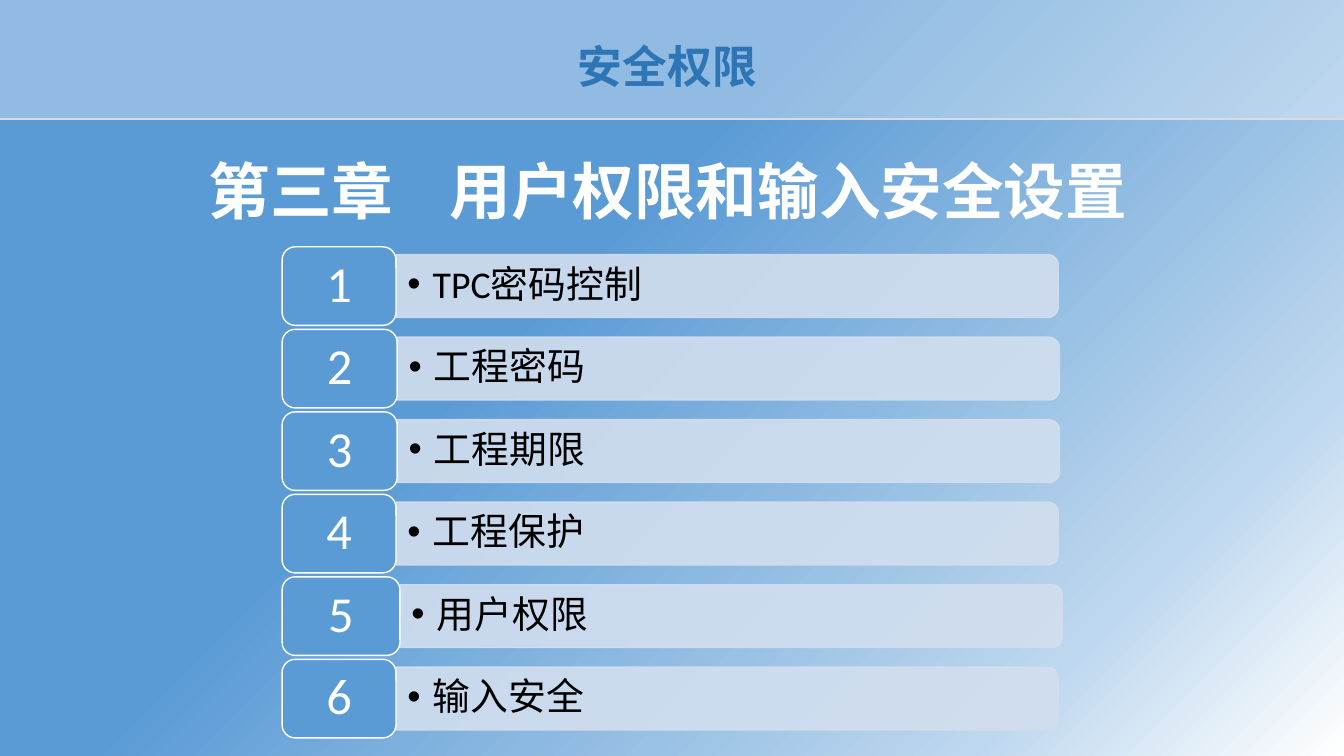
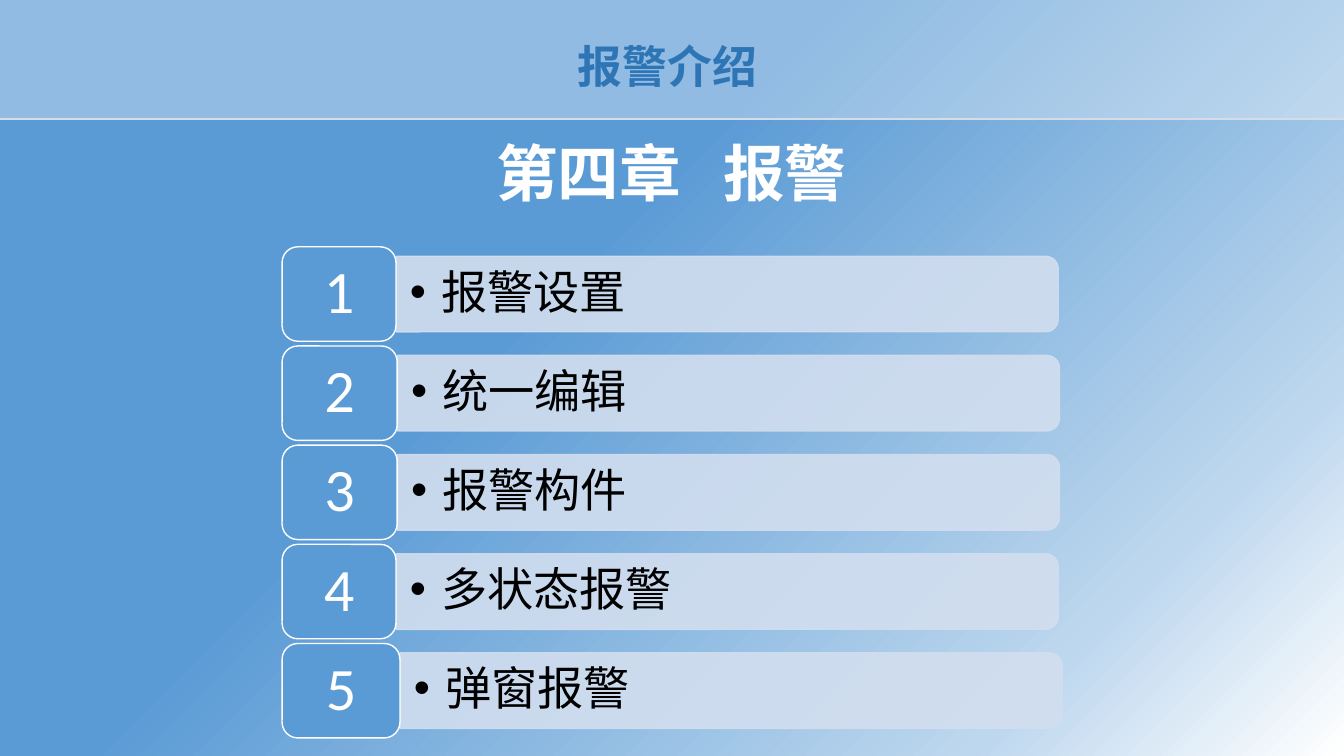
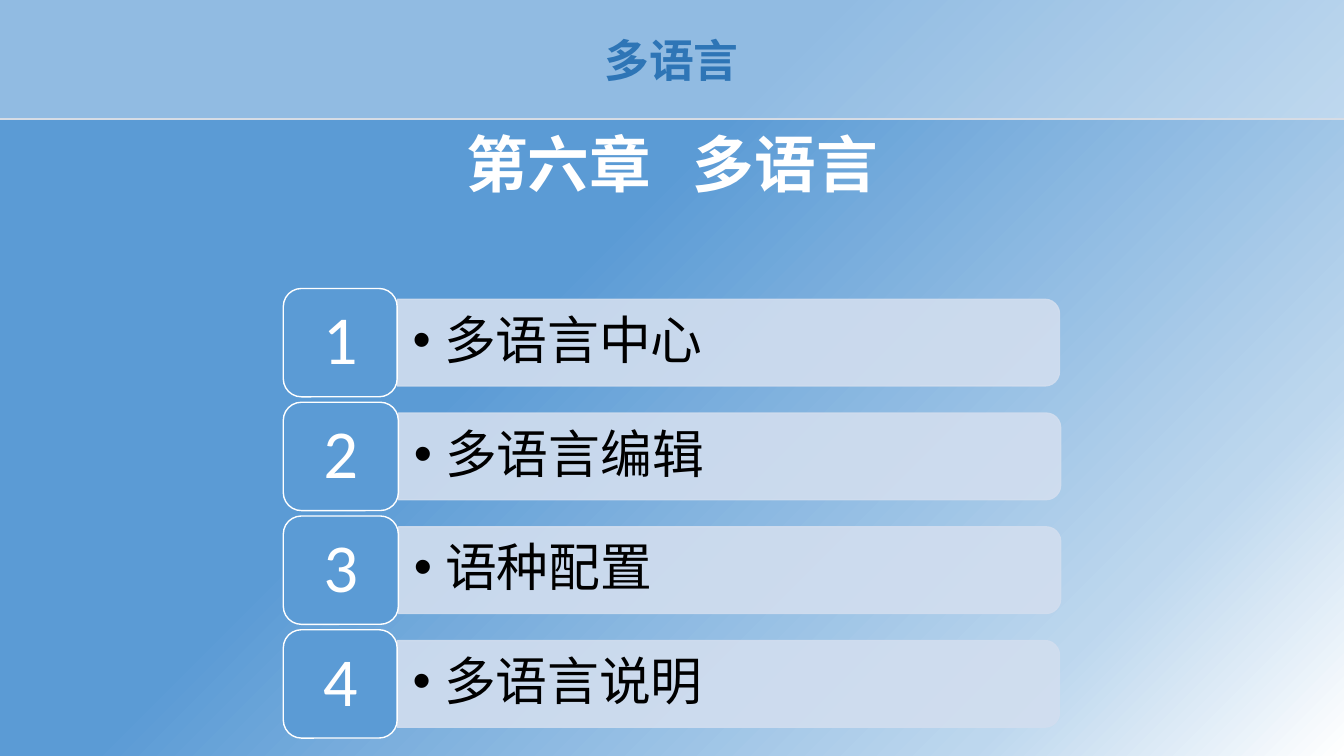
"""Build three chapter opening slides, each with a numbered list of topics."""
from dataclasses import dataclass

from pptx import Presentation
from pptx import util as u
from pptx.dml.color import RGBColor
from pptx.enum import shapes, text
from pptx.oxml import ns, parse_xml


@dataclass(frozen=True)
class Theme:
    white: str = "FFFFFF"
    black: str = "000000"
    blue: str = "5B9BD5"
    dark_blue: str = "2E75B6"
    bar: str = "D2DEEF"
    band_line: str = "D6DCE5"
    gradient: tuple[tuple[int, str], ...] = ((0, "FFFFFF"), (18, "BDD7EE"), (60, "5B9BD5"))
    title_font: str = "Noto Sans CJK SC"
    list_font: str = "Calibri"
    header_size: int = 32
    chapter_size: int = 44


@dataclass(frozen=True)
class Box:
    left: float
    top: float
    width: float
    height: float


@dataclass(frozen=True)
class Run:
    words: str
    size: float
    color: str
    font: str
    bold: bool = False


@dataclass(frozen=True)
class Chapter:
    header: str
    header_box: Box
    number: str
    name: str
    gap_size: int
    title_box: Box
    topics: tuple[str, ...]
    list_left: float
    list_top: float
    tile_height: float
    number_size: int
    topic_size: int
    indent: float


THEME = Theme()
TILE_WIDTHS = (2.87, 2.9, 2.9, 2.87, 2.97, 2.87)
PITCH_RATIO = 1.05
BAR_RATIO = 0.8
BAR_LENGTH = 16.69
LABEL_RATIO = 0.9
LABEL_WIDTH = 16.6
INSET_RATIO = 0.3

CHAPTERS = (
    Chapter("安全权限", Box(9.22, 0.86, 15.21, 1.63),
            "第三章", "用户权限和输入安全设置", 40, Box(3.63, 3.73, 26.42, 2.13),
            ("TPC密码控制", "工程密码", "工程期限", "工程保护", "用户权限", "输入安全"),
            7.11, 6.22, 1.98, 36, 27, 0.64),
    Chapter("报警介绍", Box(9.22, 0.86, 15.21, 1.63),
            "第四章", "报警", 30, Box(4.93, 3.28, 23.98, 2.13),
            ("报警设置", "统一编辑", "报警构件", "多状态报警", "弹窗报警"),
            7.11, 6.22, 2.38, 43, 33, 0.79),
    Chapter("多语言", Box(9.32, 0.71, 15.21, 1.63),
            "第六章", "多语言", 30, Box(11.07, 3.05, 11.73, 2.13),
            ("多语言中心", "多语言编辑", "语种配置", "多语言说明"),
            7.14, 7.27, 2.73, 49, 37, 0.79),
)


def place(box: Box) -> tuple[u.Length, ...]:
    return u.Cm(box.left), u.Cm(box.top), u.Cm(box.width), u.Cm(box.height)


def add_shape(slide, kind, box: Box, fill: str, line: str):
    shape = slide.shapes.add_shape(kind, *place(box))
    shape.shadow.inherit = False
    shape.fill.solid()
    shape.fill.fore_color.rgb = RGBColor.from_string(fill)
    shape.line.color.rgb = RGBColor.from_string(line)
    shape.line.width = u.Pt(1)
    return shape


def set_opacity(fill_or_line, percent: int) -> None:
    for color in fill_or_line.iter(ns.qn("a:srgbClr")):
        color.append(parse_xml(f'<a:alpha {ns.nsdecls("a")} val="{percent * 1000}"/>'))


def add_run(paragraph, content: Run) -> None:
    run = paragraph.add_run()
    run.text = content.words
    run.font.size = u.Pt(content.size)
    run.font.bold = content.bold
    run.font.name = content.font
    run.font.color.rgb = RGBColor.from_string(content.color)
    run.font._element.find(ns.qn("a:latin")).addnext(
        parse_xml(f'<a:ea {ns.nsdecls("a")} typeface="{THEME.title_font}"/>'))


def add_title(slide, box: Box, *runs: Run) -> None:
    frame = slide.shapes.add_textbox(*place(box)).text_frame
    frame.word_wrap = True
    frame.auto_size = text.MSO_AUTO_SIZE.SHAPE_TO_FIT_TEXT
    paragraph = frame.paragraphs[0]
    paragraph.alignment = text.PP_ALIGN.CENTER
    for run in runs:
        add_run(paragraph, run)


def fill_list_frame(frame, content: Run):
    frame.word_wrap = True
    frame.vertical_anchor = text.MSO_ANCHOR.MIDDLE
    frame.margin_left = frame.margin_right = u.Pt(content.size * INSET_RATIO)
    frame.margin_top = frame.margin_bottom = u.Pt(content.size * INSET_RATIO / 2)
    paragraph = frame.paragraphs[0]
    paragraph.line_spacing = 0.9
    add_run(paragraph, content)
    return paragraph


def add_bullet(paragraph, indent: float) -> None:
    properties = paragraph._p.get_or_add_pPr()
    properties.set("marL", str(u.Cm(indent)))
    properties.set("indent", str(-u.Cm(indent)))
    properties.append(parse_xml(f'<a:buFont {ns.nsdecls("a")} typeface="Arial"/>'))
    properties.append(parse_xml(f'<a:buChar {ns.nsdecls("a")} char="•"/>'))


def add_topic(slide, chapter: Chapter, index: int, topic: str) -> None:
    top = chapter.list_top + index * chapter.tile_height * PITCH_RATIO
    tile = Box(chapter.list_left, top, TILE_WIDTHS[index], chapter.tile_height)
    middle = top + tile.height / 2
    bar_left = tile.left + tile.width
    thickness = tile.height * BAR_RATIO
    upright = Box(bar_left + (BAR_LENGTH - thickness) / 2, middle - BAR_LENGTH / 2,
                  thickness, BAR_LENGTH)
    bar = add_shape(slide, shapes.MSO_SHAPE.ROUND_2_SAME_RECTANGLE, upright,
                    THEME.bar, THEME.bar)
    bar.rotation = 90
    set_opacity(bar.element.spPr, 90)

    label_height = thickness * LABEL_RATIO
    label = slide.shapes.add_textbox(
        *place(Box(bar_left, middle - label_height / 2, LABEL_WIDTH, label_height)))
    paragraph = fill_list_frame(
        label.text_frame, Run(topic, chapter.topic_size, THEME.black, THEME.list_font))
    add_bullet(paragraph, chapter.indent)

    number = add_shape(slide, shapes.MSO_SHAPE.ROUNDED_RECTANGLE, tile, THEME.blue, THEME.white)
    paragraph = fill_list_frame(
        number.text_frame,
        Run(str(index + 1), chapter.number_size, THEME.white, THEME.list_font))
    paragraph.alignment = text.PP_ALIGN.CENTER


def add_chapter(slide, chapter: Chapter) -> None:
    add_title(slide, chapter.header_box,
              Run(chapter.header, THEME.header_size, THEME.dark_blue, THEME.title_font, True))
    add_title(slide, chapter.title_box, *(
        Run(words, size, THEME.white, THEME.title_font, True)
        for words, size in ((chapter.number, THEME.chapter_size),
                            ("　", chapter.gap_size),
                            (chapter.name, THEME.chapter_size))))
    for index, topic in enumerate(chapter.topics):
        add_topic(slide, chapter, index, topic)


def style_master(master, slide) -> None:
    master.background.fill.gradient()
    gradient = master.element.find(".//" + ns.qn("a:gradFill"))
    stops = "".join(f'<a:gs pos="{position * 1000}"><a:srgbClr val="{color}"/></a:gs>'
                    for position, color in THEME.gradient)
    gradient.getparent().replace(gradient, parse_xml(
        f'<a:gradFill {ns.nsdecls("a")} rotWithShape="1"><a:gsLst>{stops}</a:gsLst>'
        '<a:path path="circle"><a:fillToRect l="100000" t="100000"/></a:path>'
        '<a:tileRect r="-100000" b="-100000"/></a:gradFill>'))
    band = add_shape(slide, shapes.MSO_SHAPE.RECTANGLE, Box(-0.02, -0.02, 33.9, 3.02),
                     THEME.white, THEME.band_line)
    set_opacity(band.element.spPr.find(ns.qn("a:solidFill")), 33)
    band.element.nvSpPr.cNvPr.set("id", "20")
    master.element.cSld.spTree.append(band.element)


def main() -> None:
    presentation = Presentation()
    presentation.slide_width = u.Cm(33.87)
    presentation.slide_height = u.Cm(19.05)
    blank = presentation.slide_layouts[6]
    slides = [presentation.slides.add_slide(blank) for _ in CHAPTERS]
    style_master(presentation.slide_master, slides[0])
    for slide, chapter in zip(slides, CHAPTERS):
        add_chapter(slide, chapter)
    presentation.save("out.pptx")


if __name__ == "__main__":
    main()
